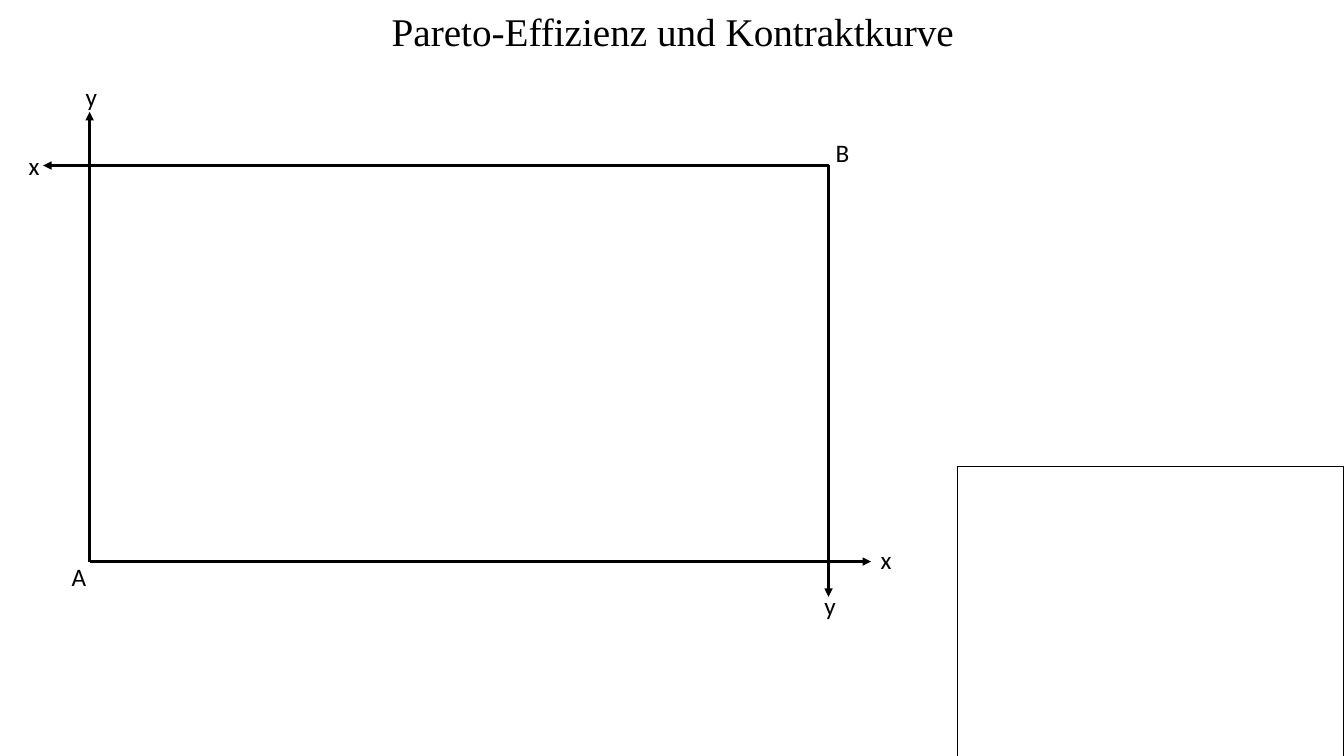
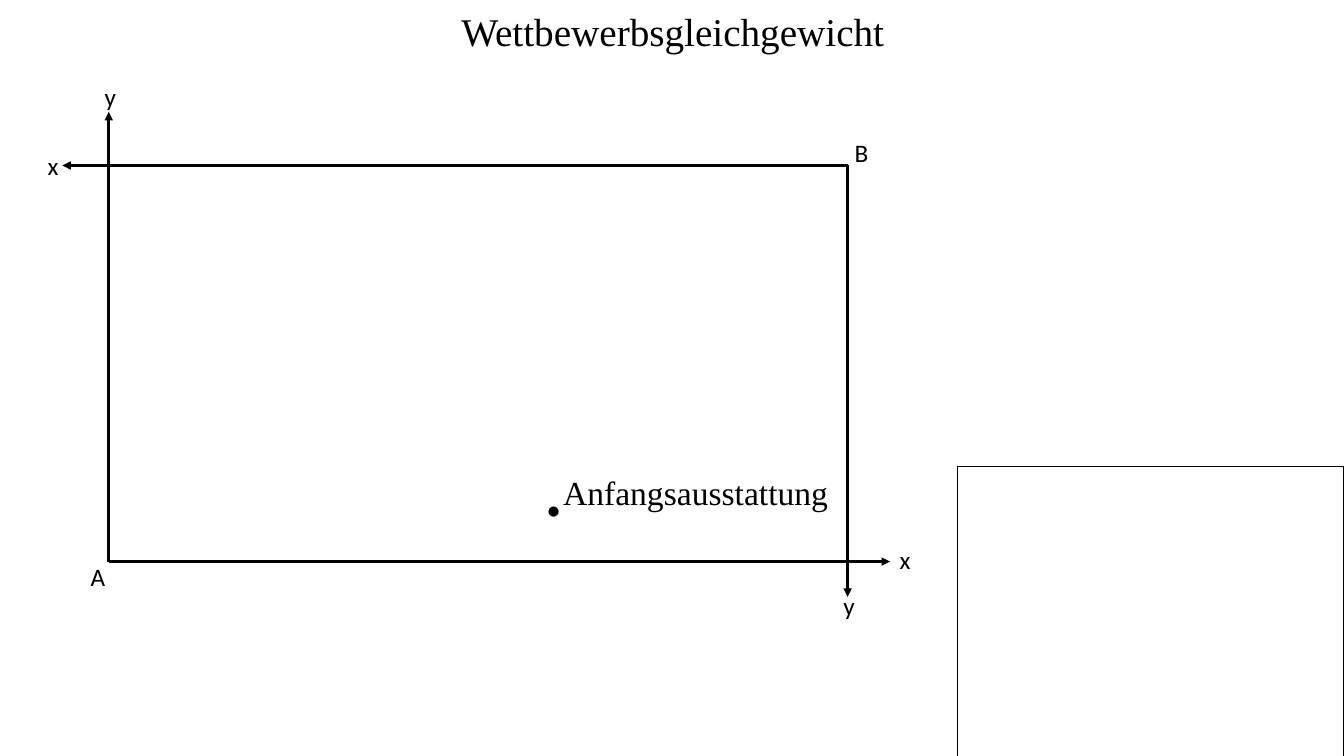
from dataclasses import dataclass

from lxml import etree
from pptx import Presentation
from pptx.dml.color import RGBColor
from pptx.enum.shapes import MSO_CONNECTOR as Connector, MSO_SHAPE as Shape
from pptx.enum.text import MSO_ANCHOR as Anchor, PP_ALIGN as Align
from pptx.oxml.ns import qn
from pptx.util import Cm, Pt


@dataclass(frozen=True)
class Theme:
    ink: RGBColor = RGBColor(0, 0, 0)
    serif: str = "Times New Roman"
    sans: str = "Calibri"
    title_size: int = 28
    label_size: int = 18
    note_size: int = 24
    point_size: int = 60
    axis_width: int = 2
    frame_width: int = 1


@dataclass(frozen=True)
class Box:
    left: float
    top: float
    width: float
    height: float

    @property
    def right(self):
        return self.left + self.width

    @property
    def bottom(self):
        return self.top + self.height

    def lengths(self):
        return Cm(self.left), Cm(self.top), Cm(self.width), Cm(self.height)


THEME = Theme()
PAGE = Box(0, 0, 33.87, 19.05)
TITLE = Box(0.05, 0.03, 33.81, 1.5)
PANEL = Box(24.13, 11.76, 9.73, 7.32)


def add_text(page, text, box, *, size, font=THEME.sans, align=Align.LEFT,
             anchor=Anchor.TOP, wrap=True, side_inset=0.25):
    frame = page.shapes.add_textbox(*box.lengths()).text_frame
    frame.word_wrap = wrap
    frame.vertical_anchor = anchor
    frame.margin_left = frame.margin_right = Cm(side_inset)
    para = frame.paragraphs[0]
    para.alignment = align
    span = para.add_run()
    span.text = text
    span.font.size = Pt(size)
    span.font.name = font
    span.font.color.rgb = THEME.ink


def add_arrow(page, start, end):
    arrow = page.shapes.add_connector(
        Connector.STRAIGHT, *(Cm(value) for value in (*start, *end)))
    arrow.line.color.rgb = THEME.ink
    arrow.line.width = Pt(THEME.axis_width)
    head = etree.SubElement(arrow.line._get_or_add_ln(), qn("a:tailEnd"))
    head.set("type", "triangle")
    etree.SubElement(arrow._element.spPr, qn("a:effectLst"))


def add_title(page, text, box):
    add_text(page, text, box, size=THEME.title_size, font=THEME.serif,
             align=Align.CENTER, anchor=Anchor.MIDDLE)


def add_label(page, text, point, shift):
    width, height = 0.76, 1.02
    box = Box(point[0] + shift[0] - width / 2,
              point[1] + shift[1] - height / 2, width, height)
    add_text(page, text, box, size=THEME.label_size, align=Align.CENTER,
             wrap=False, side_inset=0)


def add_edgeworth_box(page, box):
    origin_a = box.left, box.bottom
    origin_b = box.right, box.top
    axes = [
        ("y", origin_a, (box.left, box.top - 1.35), (0.04, -0.38)),
        ("x", origin_a, (box.right + 1.07, box.bottom), (0.38, -0.05)),
        ("y", origin_b, (box.right, box.bottom + 0.89), (0.04, 0.23)),
        ("x", origin_b, (box.left - 1.17, box.top), (-0.23, 0)),
    ]
    for name, origin, tip, shift in axes:
        add_arrow(page, origin, tip)
        add_label(page, name, tip, shift)
    add_label(page, "B", origin_b, (0.35, -0.33))
    add_label(page, "A", origin_a, (-0.27, 0.38))


def add_endowment(page, text, box):
    point = Box(box.left + 10.72, box.top + 6.6, 0.79, 2.82)
    note = Box(box.left + 11.2, box.top + 7.59, 11.53, 1.27)
    add_text(page, ".", point, size=THEME.point_size, wrap=False)
    add_text(page, text, note, size=THEME.note_size, font=THEME.serif)


def add_panel(page, box):
    panel = page.shapes.add_shape(Shape.RECTANGLE, *box.lengths())
    panel.shadow.inherit = False
    panel.fill.background()
    panel.line.color.rgb = THEME.ink
    panel.line.width = Pt(THEME.frame_width)


def add_diagram_page(deck, title, box, endowment=None):
    page = deck.slides.add_slide(deck.slide_layouts[6])
    add_edgeworth_box(page, box)
    add_title(page, title, TITLE)
    if endowment:
        add_endowment(page, endowment, box)
    add_panel(page, PANEL)


def main():
    deck = Presentation()
    deck.slide_width, deck.slide_height = Cm(PAGE.width), Cm(PAGE.height)
    add_diagram_page(deck, "Pareto-Effizienz und Kontraktkurve",
                     Box(2.26, 4.17, 18.62, 9.98))
    add_diagram_page(deck, "Wettbewerbsgleichgewicht",
                     Box(2.74, 4.17, 18.62, 9.98), "Anfangsausstattung")
    deck.save("out.pptx")


if __name__ == "__main__":
    main()
